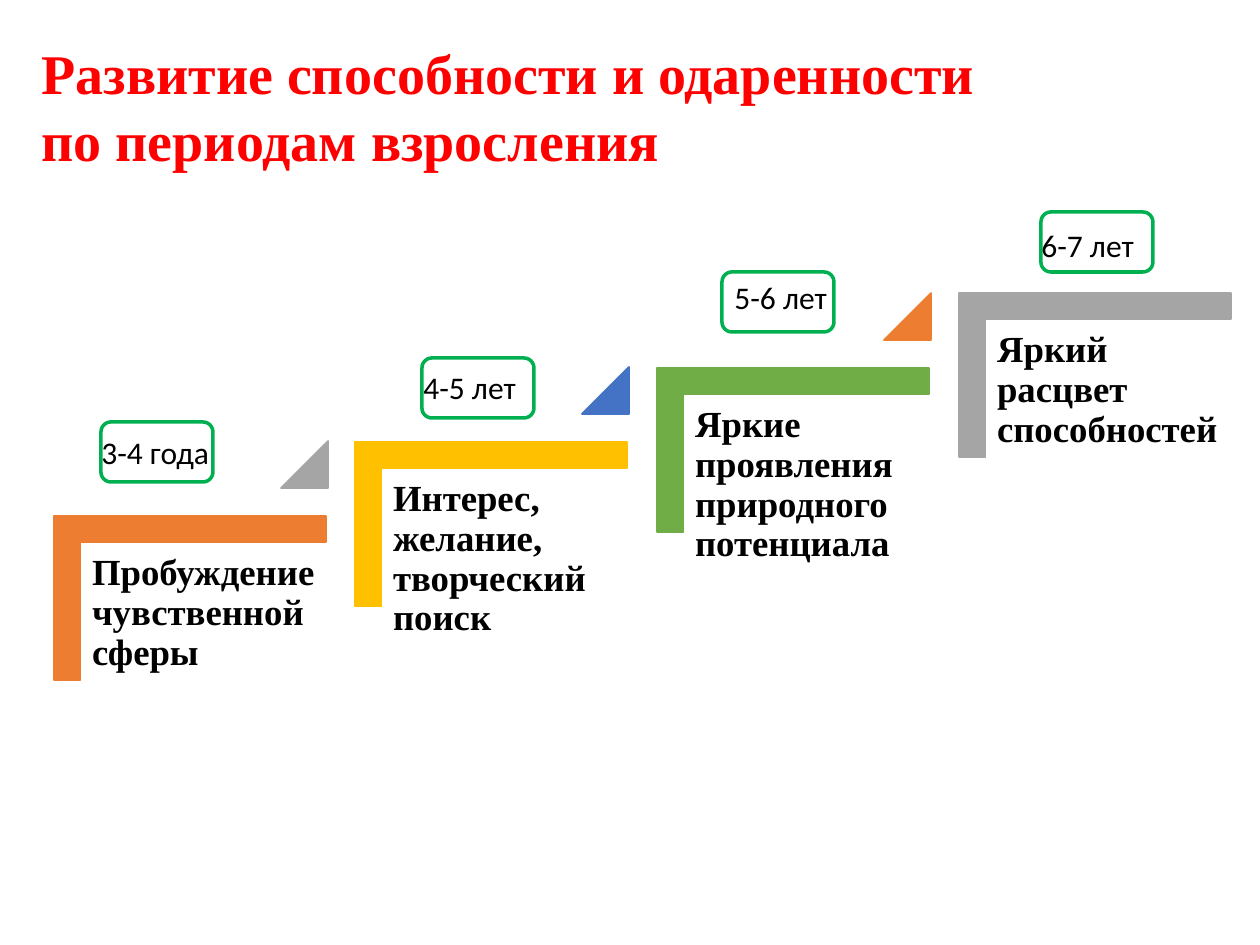
import dataclasses
import pptx
import pptx.dml.color
import pptx.enum.shapes
import pptx.enum.text
import pptx.util

SHAPE = pptx.enum.shapes.MSO_SHAPE
FIT = pptx.enum.text.MSO_AUTO_SIZE
SCALE = 914400 / 126  # EMU in one px


@dataclasses.dataclass(frozen=True)
class Theme:
    black: str = "000000"
    red: str = "FF0000"
    green: str = "00B050"
    orange: str = "ED7D31"
    gray: str = "A5A5A5"
    gold: str = "FFC000"
    blue: str = "4472C4"
    leaf: str = "70AD47"
    serif: str = "Times New Roman"
    sans: str = "Calibri"
    head: int = 32
    body: int = 21
    label: int = 18


THEME = Theme()


def px(*nums):
    return [round(num * SCALE) for num in nums]


def rgb(code):
    return pptx.dml.color.RGBColor.from_string(code)


def add_text(slide, box, text, font=THEME.serif, size=THEME.body,
             color=THEME.black, bold=False, wrap=True, grow=False,
             inset=None, lead=None):
    frame = slide.shapes.add_textbox(*px(*box)).text_frame
    frame.word_wrap = wrap
    frame.auto_size = FIT.SHAPE_TO_FIT_TEXT if grow else FIT.NONE
    if inset is not None:
        frame.margin_left = frame.margin_right = px(inset)[0]
        frame.margin_top = frame.margin_bottom = px(inset)[0]
    para = frame.paragraphs[0]
    if lead:
        para.line_spacing = lead
    run = para.add_run()
    run.text = text
    run.font.name = font
    run.font.size = pptx.util.Pt(size)
    run.font.bold = bold
    run.font.color.rgb = rgb(color)


def add_shape(slide, kind, box, line, width=1, fill=None, adjust=()):
    shape = slide.shapes.add_shape(kind, *px(*box))
    shape.shadow.inherit = False
    if fill:
        shape.fill.solid()
        shape.fill.fore_color.rgb = rgb(fill)
    else:
        shape.fill.background()
    shape.line.color.rgb = rgb(line)
    shape.line.width = pptx.util.Pt(width)
    for num, value in enumerate(adjust):
        shape.adjustments[num] = value
    return shape


def add_step(slide, box, text, color, rise):
    left, top, width, height = box
    # Corner: drawn upright, then turned about its centre
    shift = (width - height) // 2
    corner = add_shape(slide, SHAPE.CORNER,
                       (left + shift, top - shift, height, width),
                       color, fill=color, adjust=(0.161, 0.161))
    corner.rotation = 90
    add_text(slide, (left + 27, top + 27, 246, 215), text,
             bold=True, inset=11, lead=0.9)
    # Triangle that leads up to the next step
    if rise:
        add_shape(slide, SHAPE.ISOSCELES_TRIANGLE,
                  (left + width - 45, top - 75, 47, 47),
                  rise, fill=rise, adjust=(1,))


def add_age(slide, box, text, dx, dy, width):
    left, top = box[:2]
    add_shape(slide, SHAPE.ROUNDED_RECTANGLE, box, THEME.green, width=2)
    add_text(slide, (left + dx, top + dy, width, 50), text,
             font=THEME.sans, size=THEME.label, wrap=False, grow=True)


def main():
    deck = pptx.Presentation()
    deck.slide_width, deck.slide_height = px(1260, 945)
    slide = deck.slides.add_slide(deck.slide_layouts[6])

    # Staircase
    steps = [
        ("Пробуждение чувственной сферы", THEME.orange, THEME.gray),
        ("Интерес, желание, творческий поиск", THEME.gold, THEME.blue),
        ("Яркие проявления природного потенциала", THEME.leaf, THEME.orange),
        ("Яркий расцвет способностей", THEME.gray, None),
    ]
    for num, (text, color, rise) in enumerate(steps):
        box = (54 + num * 905 // 3, 516 - num * 223 // 3, 272, 164)
        add_step(slide, box, text, color, rise)

    # Ages
    ages = [
        ("3-4 года", 101, 422, -12, 5, 135),
        ("4-5 лет", 422, 358, -11, 4, 118),
        ("5-6 лет", 722, 272, 0, 0, 118),
        ("6-7 лет", 1041, 212, -12, 8, 118),
    ]
    for text, left, top, dx, dy, width in ages:
        add_age(slide, (left, top, 112, 60), text, dx, dy, width)

    # Title
    add_text(slide, (29, 32, 1012, 149),
             "Развитие способности и одаренности по периодам взросления",
             size=THEME.head, color=THEME.red, bold=True, grow=True)

    deck.save("out.pptx")


if __name__ == "__main__":
    main()
